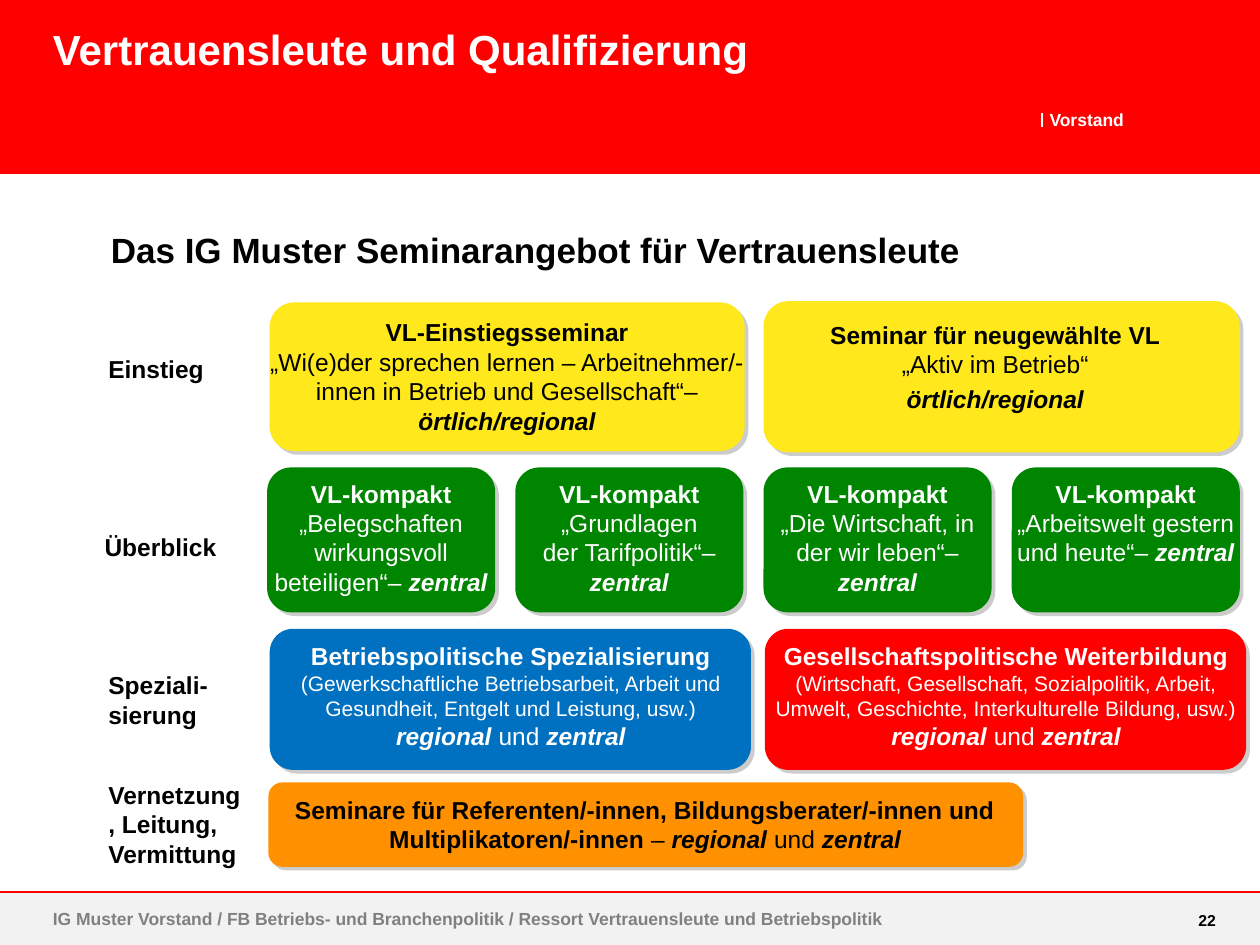
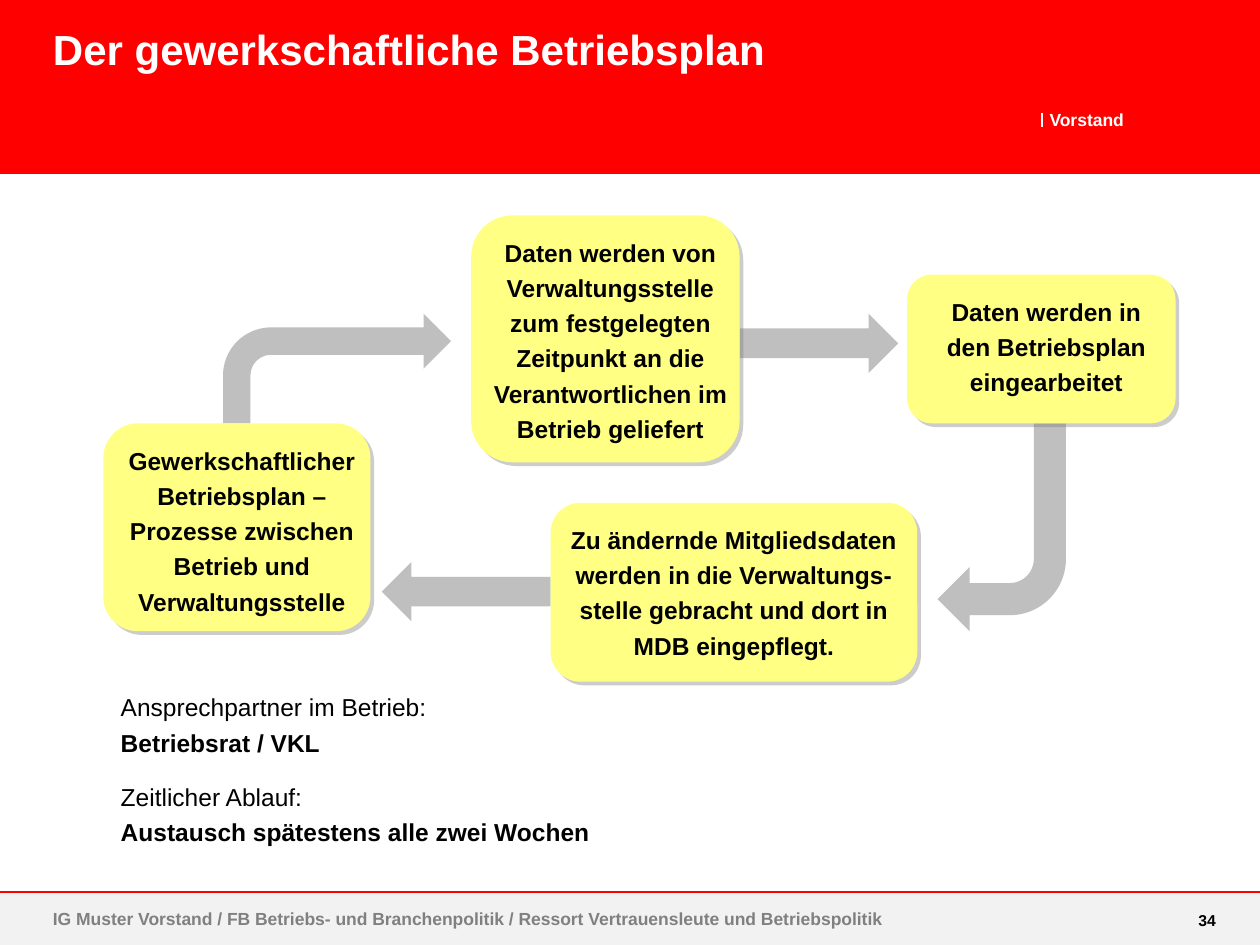
from collections import namedtuple

from lxml import etree
from pptx import Presentation
from pptx.dml.color import RGBColor
from pptx.enum.shapes import MSO_CONNECTOR, MSO_SHAPE as Shape
from pptx.enum.text import MSO_ANCHOR, MSO_AUTO_SIZE, PP_ALIGN as Align
from pptx.oxml.ns import qn
from pptx.util import Inches, Pt

# Slide grid: 100 columns by 75 rows
WIDTH, HEIGHT = Inches(10), Inches(7.5)
COLUMN, ROW = WIDTH / 100, HEIGHT / 75

FONT = "Arial"
RED = RGBColor(0xFF, 0x00, 0x00)
WHITE = RGBColor(0xFF, 0xFF, 0xFF)
BLACK = RGBColor(0x00, 0x00, 0x00)
FOOTER_FILL = RGBColor(0xF2, 0xF2, 0xF2)
FOOTER_TEXT = RGBColor(0x80, 0x80, 0x80)
YELLOW = RGBColor(0xFF, 0xE8, 0x1B)
GREEN = RGBColor(0x00, 0x85, 0x00)
BLUE = RGBColor(0x00, 0x70, 0xC0)
ORANGE = RGBColor(0xFF, 0x91, 0x00)
PALE_YELLOW = RGBColor(0xFF, 0xFF, 0x83)
ARROW_GREY = RGBColor(0xBF, 0xBF, 0xBF)

FOOTER = ("IG Muster Vorstand / FB Betriebs- und Branchenpolitik / "
          "Ressort Vertrauensleute und Betriebspolitik")


class Box(namedtuple("Box", "x y w h")):
    """A rectangle in grid columns and rows."""

    def emu(self):
        return (round(self.x * COLUMN), round(self.y * ROW),
                round(self.w * COLUMN), round(self.h * ROW))

    def inner(self, x, y, w, h):
        return Box(self.x + x, self.y + y, w, h)


def write(frame, paragraphs, color=BLACK, size=14, align=Align.LEFT,
          spacing=None, last_gap=0):
    """Each paragraph is a list of (text, style[, size]); style holds b and i."""
    for index, spans in enumerate(paragraphs):
        para = frame.paragraphs[0] if index == 0 else frame.add_paragraph()
        para.alignment = align
        if spacing:
            para.line_spacing = spacing
        for text, style, *own_size in spans:
            span = para.add_run()
            span.text = text
            font = span.font
            font.name, font.size = FONT, Pt(own_size[0] if own_size else size)
            font.bold, font.italic = "b" in style, "i" in style
            font.color.rgb = color
    if last_gap:
        para.space_before = Pt(last_gap)


def clear_margins(frame):
    frame.margin_left = frame.margin_right = 0
    frame.margin_top = frame.margin_bottom = 0


def add_text(page, box, paragraphs, padded=False, wrap=True, **style):
    frame = page.shapes.add_textbox(*box.emu()).text_frame
    frame.word_wrap = wrap
    if not padded:
        clear_margins(frame)
    write(frame, paragraphs, **style)


def add_block(page, kind, box, fill, rotation=0):
    block = page.shapes.add_shape(kind, *box.emu())
    block.shadow.inherit = False
    block.fill.solid()
    block.fill.fore_color.rgb = fill
    block.line.fill.background()
    block.rotation = rotation
    return block


def add_rule(page, x1, y1, x2, y2, color):
    rule = page.shapes.add_connector(
        MSO_CONNECTOR.STRAIGHT, round(x1 * COLUMN), round(y1 * ROW),
        round(x2 * COLUMN), round(y2 * ROW))
    rule.line.color.rgb = color
    rule.line.width = Pt(0.8)
    etree.SubElement(rule.element.spPr, qn("a:effectLst"))


def add_card(page, box, fill, paragraphs, inset, color=BLACK, **style):
    """Rounded card with centred text; inset is left, top, right."""
    card = add_block(page, Shape.ROUNDED_RECTANGLE, box, fill)
    effects = card.element.spPr.find(qn("a:effectLst"))
    shadow = etree.SubElement(effects, qn("a:outerShdw"), dist=str(Pt(3)),
                              dir=str(45 * 60000), algn="tl", rotWithShape="0")
    tint = etree.SubElement(shadow, qn("a:srgbClr"), val="808080")
    etree.SubElement(tint, qn("a:alpha"), val="40000")
    left, top, right = inset
    add_text(page, box.inner(left, top, box.w - left - right, box.h - 2 * top),
             paragraphs, padded=True, color=color, align=Align.CENTER, **style)


def add_page(deck, title, number):
    """Slide with the shared red band, title and footer."""
    page = deck.slides.add_slide(deck.slide_layouts[5])

    # Bands and rules
    add_block(page, Shape.RECTANGLE, Box(0, 70.8, 100, 4.2), FOOTER_FILL)
    add_rule(page, 0, 70.8, 100, 70.8, RED)
    add_block(page, Shape.RECTANGLE, Box(0, 0, 100, 13.8), RED)
    add_text(page, Box(83.3, 8.8, 6, 1.6), [[("Vorstand", "b")]], wrap=False,
             color=WHITE, size=10, spacing=Pt(11))
    add_rule(page, 82.7, 9, 82.7, 10.1, WHITE)

    # Footer
    add_text(page, Box(95.1, 72.1, 1.4, 1.6), [[(number, "b")]], wrap=False,
             size=9, align=Align.RIGHT, spacing=Pt(12))
    add_text(page, Box(4.2, 72.1, 66.1, 1.7), [[(FOOTER, "b")]], wrap=False,
             color=FOOTER_TEXT, size=10)

    # Title, brought in front of the band
    heading = page.shapes.title
    heading.left, heading.top, heading.width, heading.height = Box(
        4.2, 1.1, 67.9, 12.5).emu()
    frame = heading.text_frame
    frame.auto_size = MSO_AUTO_SIZE.NONE
    frame.vertical_anchor = MSO_ANCHOR.TOP
    clear_margins(frame)
    write(frame, [[(title, "b")]], color=WHITE, size=24, spacing=1.2)
    page.shapes.element.append(heading.element)
    return page


def add_row_labels(page, area):
    labels = [
        (0.3, 4.2, 2.4, ["Einstieg"]),
        (0, 18.3, 2.4, ["Überblick"]),
        (0.3, 29.3, 4.7, ["Speziali-sierung"]),
        (0.3, 38, 7.1, ["Vernetzung, Leitung,", "Vermittung"]),
    ]
    for x, y, height, lines in labels:
        add_text(page, area.inner(x, y, 11, height), [[(line, "b")] for line in lines])


def add_seminars(page, area):
    local = [("örtlich/regional", "bi")]
    central = ("zentral", "bi")

    # Entry seminars
    add_card(page, area.inner(0.2, 0, 37.7, 11.8), YELLOW, [
        [("VL-Einstiegsseminar", "b")],
        [("„Wi(e)der sprechen lernen – Arbeitnehmer/-innen in Betrieb und "
          "Gesellschaft“– ", "")] + local], inset=(-1, 0.7, -1))
    add_card(page, area.inner(39.4, -0.1, 37.8, 12), YELLOW, [
        [("Seminar für neugewählte VL", "b")],
        [("„Aktiv im Betrieb“", "")], local], inset=(-1, 1, 0), last_gap=3)

    # Overview seminars in four equal columns
    topics = [
        ["„Belegschaften wirkungsvoll beteiligen“– "],
        ["„Grundlagen", "der Tarifpolitik“– "],
        ["„Die Wirtschaft, in der wir leben“– "],
        ["„Arbeitswelt gestern und heute“– "],
    ]
    for index, lines in enumerate(topics):
        paragraphs = [[("VL-kompakt", "b")]] + [[(line, "")] for line in lines]
        paragraphs[-1].append(central)
        add_card(page, area.inner(index * 19.7, 13.1, 18.1, 11.5), GREEN,
                 paragraphs, inset=(-0.8, 0.4, -0.8), color=WHITE)

    # Specialisation
    fields = [
        (BLUE, "Betriebspolitische Spezialisierung",
         "(Gewerkschaftliche Betriebsarbeit, Arbeit und Gesundheit, "
         "Entgelt und Leistung, usw.) "),
        (RED, "Gesellschaftspolitische Weiterbildung",
         "(Wirtschaft, Gesellschaft, Sozialpolitik, Arbeit, Umwelt, "
         "Geschichte, Interkulturelle Bildung, usw.) "),
    ]
    for index, (fill, name, subjects) in enumerate(fields):
        add_card(page, area.inner(0.2 + index * 39.3, 25.9, 38.2, 11.2), fill, [
            [(name, "b")],
            [(subjects, "", 12), ("regional ", "bi"), ("und ", ""), central],
        ], inset=(-0.5, 0.5, -0.6), color=WHITE)

    # Networking
    add_card(page, area.inner(0.1, 38.1, 59.9, 6.7), ORANGE, [[
        ("Seminare für Referenten/-innen, Bildungsberater/-innen und "
         "Multiplikatoren/-innen ", "b"),
        ("– ", ""), ("regional", "bi"), (" und ", ""), central,
    ]], inset=(-0.9, 0.5, -0.8))


def add_cycle(page, area):
    """Cards joined to a cycle by block arrows."""
    arrows = [
        (Shape.BENT_ARROW, 9.5, 7.8, 18.1, 8.7, 0),
        (Shape.RIGHT_ARROW, 50.5, 7.8, 12.6, 4.7, 0),
        (Shape.BENT_ARROW, 66.2, 16.5, 10.2, 16.5, 180),
        (Shape.RIGHT_ARROW, 22.1, 27.5, 13.4, 4.7, 180),
    ]
    for kind, x, y, width, height, rotation in arrows:
        add_block(page, kind, area.inner(x, y, width, height), ARROW_GREY, rotation)

    steps = [
        ((0, 16.5, 21.2, 16.5), 0.8,
         ["Gewerkschaftlicher",
          "Betriebsplan – Prozesse zwischen Betrieb und Verwaltungsstelle"]),
        ((29.2, 0, 21.3, 19.6), 0.8,
         ["Daten werden von Verwaltungsstelle zum festgelegten Zeitpunkt "
          "an die Verantwortlichen im Betrieb geliefert"]),
        ((63.8, 4.7, 21.3, 11.8), 0.8,
         ["Daten werden in den Betriebsplan eingearbeitet"]),
        ((35.5, 22.8, 29.1, 14.2), -0.8,
         ["Zu ändernde Mitgliedsdaten werden in die Verwaltungs-stelle "
          "gebracht und dort in MDB eingepflegt."]),
    ]
    for place, left, lines in steps:
        add_card(page, area.inner(*place), PALE_YELLOW,
                 [[(line, "b")] for line in lines],
                 inset=(left, 0.8, min(left, 0)), spacing=1.2)


def add_agreements(page, area):
    notes = [("Ansprechpartner im Betrieb:", "Betriebsrat / VKL"),
             ("Zeitlicher Ablauf:", "Austausch spätestens alle zwei Wochen")]
    for index, (topic, answer) in enumerate(notes):
        add_text(page, area.inner(0, index * 7.1, area.w, 6.6),
                 [[(topic, "")], [(answer, "b")]], padded=True, spacing=1.2)


def main():
    deck = Presentation()
    deck.slide_width, deck.slide_height = WIDTH, HEIGHT

    page = add_page(deck, "Vertrauensleute und Qualifizierung", "22")
    add_text(page, Box(8.8, 17.5, 88.7, 4),
             [[("Das IG Muster Seminarangebot für Vertrauensleute", "b")]],
             size=20, spacing=1.2)
    add_row_labels(page, Box(8.3, 23.9, 11.3, 45))
    add_seminars(page, Box(21.2, 24, 77.2, 45))

    page = add_page(deck, "Der gewerkschaftliche Betriebsplan", "34")
    add_cycle(page, Box(8.2, 17.1, 85.1, 37))
    add_agreements(page, Box(8.6, 54, 42.5, 13.7))

    deck.save("out.pptx")


if __name__ == "__main__":
    main()
